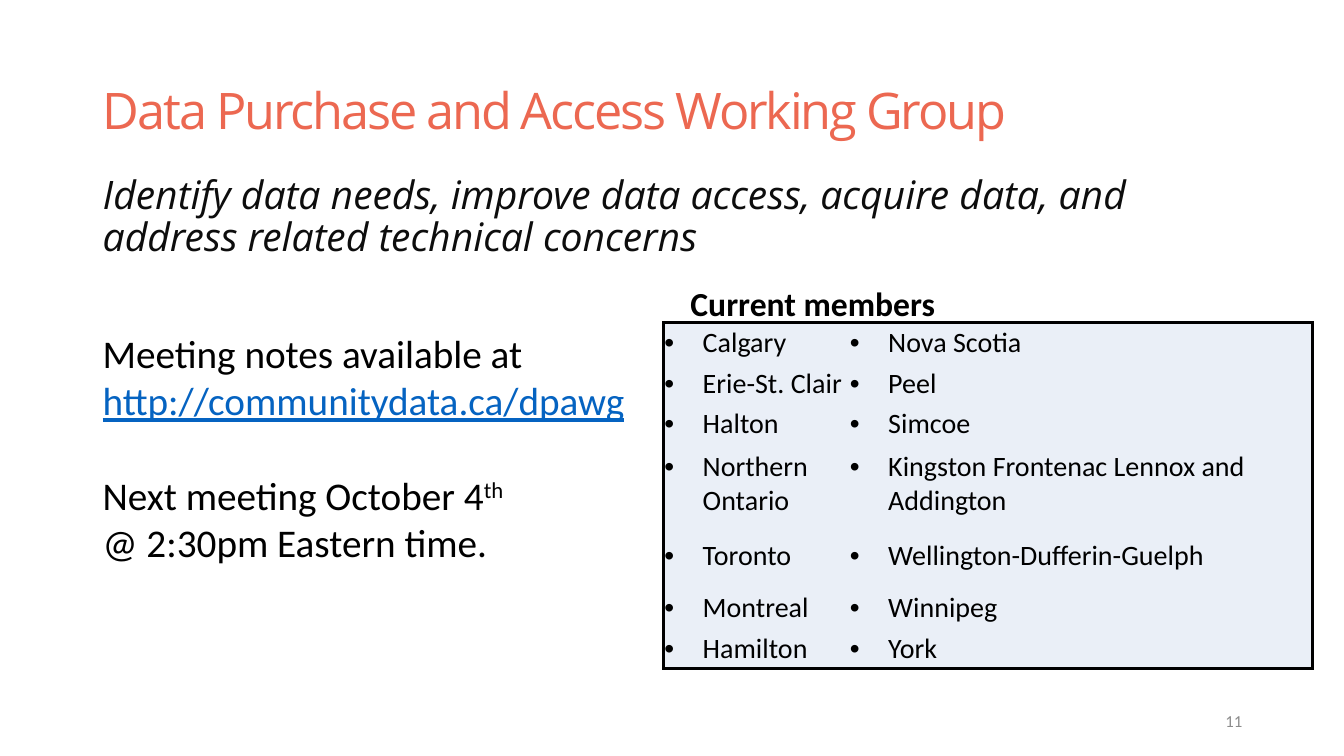
from lxml.etree import SubElement
from pptx import Presentation
from pptx.dml.color import RGBColor
from pptx.enum.text import MSO_ANCHOR, PP_ALIGN
from pptx.oxml.ns import qn
from pptx.util import Inches, Pt

COLORS = {
    "title": "EC6851",
    "purpose": "0D0D0D",
    "text": "000000",
    "link": "0563C1",
    "number": "8C8C8C",
    "cell": "EAEFF7",
}


def add_text(paragraph, text, size=28, font="Calibri", color="text", bold=False,
             italic=False, underline=False, spacing=None, baseline=None):
    run = paragraph.add_run()
    run.text = text
    run.font.size = Pt(size)
    run.font.name = font
    run.font.bold = bold
    run.font.italic = italic
    run.font.underline = underline
    run.font.color.rgb = RGBColor.from_string(COLORS[color])
    for attribute, value in (("spc", spacing), ("baseline", baseline)):
        if value is not None:
            run._r.get_or_add_rPr().set(attribute, str(value))


def add_box(left, top, width, height, anchor=MSO_ANCHOR.TOP):
    box = slide.shapes.add_textbox(Inches(left), Inches(top), Inches(width), Inches(height))
    box.text_frame.word_wrap = True
    box.text_frame.vertical_anchor = anchor
    return box.text_frame


prs = Presentation()
prs.slide_width = Inches(13.33)
prs.slide_height = Inches(7.5)
slide = prs.slides.add_slide(prs.slide_layouts[5])

# Title
title = slide.shapes.title
title.left, title.top = Inches(0.92), Inches(0.4)
title.width, title.height = Inches(11.5), Inches(1.45)
title.text_frame.vertical_anchor = MSO_ANCHOR.MIDDLE
heading = title.text_frame.paragraphs[0]
heading.alignment = PP_ALIGN.LEFT
heading.line_spacing = 0.9
add_text(heading, "Data Purchase and Access Working Group", size=36,
         font="Open Sans", color="title", spacing=-150)

# Purpose of the group
purpose = add_box(0.92, 1.69, 11.5, 4.76).paragraphs[0]
purpose.line_spacing = 0.9
add_text(purpose, "Identify data needs, improve data access, acquire data, and "
         "address related technical concerns", font="Open Sans", color="purpose", italic=True)

# Slide number
number = add_box(9.42, 6.95, 3, 0.4, MSO_ANCHOR.MIDDLE).paragraphs[0]
number.alignment = PP_ALIGN.RIGHT
add_text(number, "11", size=12, color="number")

# Members table
members = [
    ("Calgary", "Nova Scotia"),
    ("Erie-St. Clair", "Peel"),
    ("Halton", "Simcoe"),
    ("Northern Ontario", "Kingston Frontenac Lennox and Addington"),
    ("Toronto", "Wellington-Dufferin-Guelph"),
    ("Montreal", "Winnipeg"),
    ("Hamilton", "York"),
]
column_widths = [1.84, 4.6]
row_heights = [0.4, 0.4, 0.4, 0.79, 0.64, 0.4, 0.4]
table = slide.shapes.add_table(len(members), 2, Inches(6.58), Inches(3.2),
                               Inches(6.44), Inches(3.44)).table
table.first_row = False
table.horz_banding = False
for column, width in zip(table.columns, column_widths):
    column.width = Inches(width)

for r, (names, height) in enumerate(zip(members, row_heights)):
    table.rows[r].height = Inches(height)
    for c, name in enumerate(names):
        cell = table.cell(r, c)
        cell.vertical_anchor = MSO_ANCHOR.MIDDLE
        cell.margin_left = cell.margin_right = cell.margin_top = Inches(0.01)
        cell.margin_bottom = 0

        # Black frame on the outer sides only
        outer_sides = {"a:lnL": c == 0, "a:lnR": c == 1,
                       "a:lnT": r == 0, "a:lnB": r == len(members) - 1}
        for side, is_outer in outer_sides.items():
            border = SubElement(cell._tc.get_or_add_tcPr(), qn(side), w=str(Pt(2.25)))
            if is_outer:
                fill = SubElement(border, qn("a:solidFill"))
                SubElement(fill, qn("a:srgbClr"), val=COLORS["text"])
            else:
                SubElement(border, qn("a:noFill"))
        cell.fill.solid()
        cell.fill.fore_color.rgb = RGBColor.from_string(COLORS["cell"])

        member = cell.text_frame.paragraphs[0]
        properties = member._p.get_or_add_pPr()
        properties.set("marL", str(Inches(0.38)))
        properties.set("indent", str(Inches(-0.38)))
        SubElement(properties, qn("a:buFont"), typeface="Arial")
        SubElement(properties, qn("a:buChar"), char="•")
        add_text(member, name, size=20)

# Table heading
members_heading = add_box(6.75, 2.76, 6.27, 0.5).paragraphs[0]
add_text(members_heading, "Current members", size=24, bold=True)

# Meeting details
meeting = add_box(0.92, 3.22, 5.5, 2.93)
notes = meeting.paragraphs[0]
add_text(notes, "Meeting notes available at ")
add_text(notes, "http://communitydata.ca/dpawg", color="link", underline=True)
next_date = meeting.add_paragraph()
next_date.space_before = Pt(34)
add_text(next_date, "Next meeting October 4")
add_text(next_date, "th", baseline=30000)
add_text(meeting.add_paragraph(), "@ 2:30pm Eastern time.")

prs.save("out.pptx")
